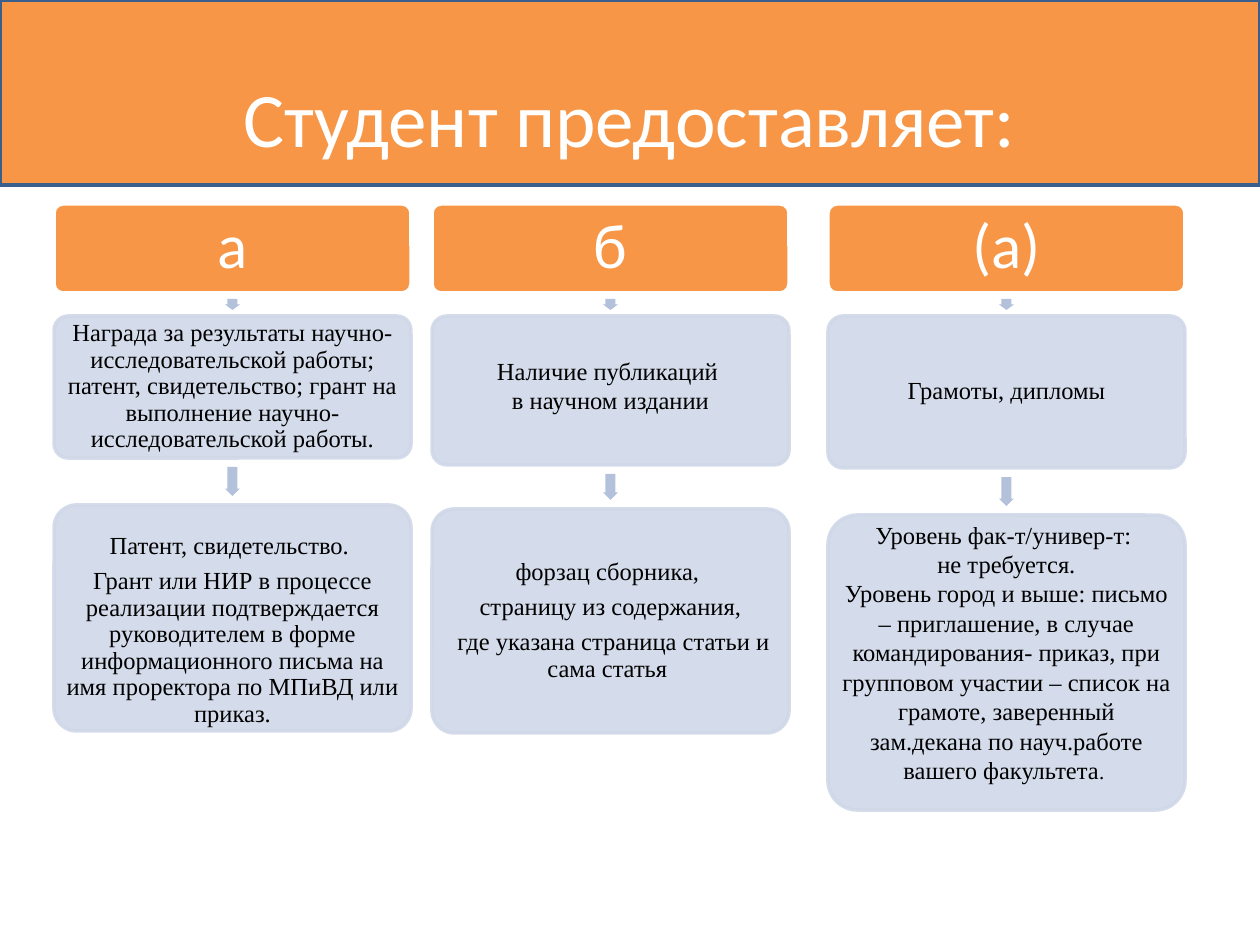
from dataclasses import dataclass

from lxml.etree import SubElement
from pptx import Presentation
from pptx.dml.color import RGBColor
from pptx.enum.shapes import MSO_SHAPE
from pptx.enum.text import MSO_ANCHOR, PP_ALIGN
from pptx.oxml.ns import qn
from pptx.util import Emu, Pt


@dataclass(frozen=True)
class Theme:
    orange: RGBColor = RGBColor(0xF7, 0x96, 0x46)
    banner_line: RGBColor = RGBColor(0x3A, 0x5F, 0x8C)
    card: RGBColor = RGBColor(0xD0, 0xD8, 0xE8)
    arrow: RGBColor = RGBColor(0xB3, 0xC1, 0xDB)
    white: RGBColor = RGBColor(0xFF, 0xFF, 0xFF)
    black: RGBColor = RGBColor(0, 0, 0)
    head_font: str = "Calibri"
    body_font: str = "Times New Roman"
    title_size: int = 44
    head_size: int = 36
    body_size: int = 14
    stop_size: int = 12


theme = Theme()
PX = 914400 / 126

prs = Presentation()
prs.slide_width, prs.slide_height = Emu(round(1260 * PX)), Emu(round(945 * PX))
slide = prs.slides.add_slide(prs.slide_layouts[5])


def add_shape(kind, x, y, w, h, fill, line=None):
    sp = slide.shapes.add_shape(kind, *(Emu(round(v * PX)) for v in (x, y, w, h)))
    sp.shadow.inherit = False
    sp.fill.solid()
    sp.fill.fore_color.rgb = fill
    if line is None:
        sp.line.fill.background()
    else:
        sp.line.color.rgb = line
        sp.line.width = Pt(2)
    return sp


def add_card(y, h, paragraphs, font, size, color, fill, line, insets, spaced=True):
    """Rounded box in the current column; insets are (side, top, bottom) px."""
    sp = add_shape(MSO_SHAPE.ROUNDED_RECTANGLE, left, y, CARD_W, h, fill, line)
    sp.adjustments[0] = 0.1
    tf = sp.text_frame
    tf.word_wrap = True
    tf.vertical_anchor = MSO_ANCHOR.MIDDLE
    side, top, bottom = (Emu(round(v * PX)) for v in insets)
    tf.margin_left = tf.margin_right = side
    tf.margin_top, tf.margin_bottom = top, bottom
    for i, text in enumerate(paragraphs):
        p = tf.paragraphs[0] if i == 0 else tf.add_paragraph()
        p.alignment = PP_ALIGN.CENTER
        if spaced:
            p.line_spacing = 0.9
            p.space_after = Pt(round(size * 0.35))
        p.font.name, p.font.size, p.font.color.rgb = font, Pt(size), color
        p.add_run().text = text
    return sp


# Banner and title
banner = add_shape(MSO_SHAPE.RECTANGLE, 0, 0, 1260, 185, theme.orange, theme.banner_line)
title = slide.shapes.title
title._element.addprevious(banner._element)
title.left, title.top, title.width, title.height = (
    Emu(round(v * PX)) for v in (63, 38, 1134, 157))
title.text_frame.vertical_anchor = MSO_ANCHOR.MIDDLE
p = title.text_frame.paragraphs[0]
p.text = "Студент предоставляет:"
p.alignment = PP_ALIGN.CENTER
p.font.name, p.font.size = theme.head_font, Pt(theme.title_size)
p.font.color.rgb = theme.white

# Columns: left, heading, long arrow height, cards of (height, insets, spaced, paragraphs)
CARD_W, HEAD_Y, HEAD_H, ARROW_W = 357, 204, 89, 15
columns = [
    (54, "a", 29, [
        (142, (3, 3, 3), True, [
            "Награда за результаты научно-исследовательской работы; патент, "
            "свидетельство; грант на выполнение научно-исследовательской работы."]),
        (226, (3, 28, 3), True, [
            "Патент, свидетельство. ",
            "Грант или НИР в процессе реализации подтверждается руководителем в форме "
            "информационного письма на имя проректора по МПиВД или приказ."]),
    ]),
    (432, "б", 26, [
        (149, (3, 3, 13), False, ["Наличие публикаций ", "в научном издании"]),
        (224, (3, 3, 3), True, [
            "форзац сборника, ", "страницу из содержания,",
            " где указана страница статьи и сама статья "]),
    ]),
    (828, "(а)", 29, [
        (152, (3, 3, 3), True, ["Грамоты, дипломы"]),
        (295, (3, 3, 24), False, [
            "Уровень фак-т/универ-т: ", "не требуется.",
            "Уровень город и выше: письмо – приглашение, в случае командирования- "
            "приказ, при групповом участии – список на грамоте, заверенный "
            "зам.декана по науч.работе вашего факультета"]),
    ]),
]

for left, heading, long_arrow, cards in columns:
    add_card(HEAD_Y, HEAD_H, [heading], theme.head_font, theme.head_size, theme.white,
             theme.orange, theme.white, (6, 6, 6))
    y = HEAD_Y + HEAD_H
    for (gap, arrow_h), (h, insets, spaced, paragraphs) in zip(
            [(6, 11), (9, long_arrow)], cards):
        arrow = add_shape(MSO_SHAPE.DOWN_ARROW, left + (CARD_W - ARROW_W) / 2, y + gap,
                          ARROW_W, arrow_h, theme.arrow)
        arrow.adjustments[0], arrow.adjustments[1] = 0.67, 0.5
        y += arrow_h + 2 * gap
        card = add_card(y, h, paragraphs, theme.body_font, theme.body_size, theme.black,
                        theme.card, theme.card, insets, spaced)
        for color in card._element.spPr.iter(qn("a:srgbClr")):
            SubElement(color, qn("a:alpha"), val="90000")
        y += h

# The last card closes with a smaller full stop
r = card.text_frame.paragraphs[-1].add_run()
r.text = ". "
r.font.size = Pt(theme.stop_size)

prs.save("out.pptx")
